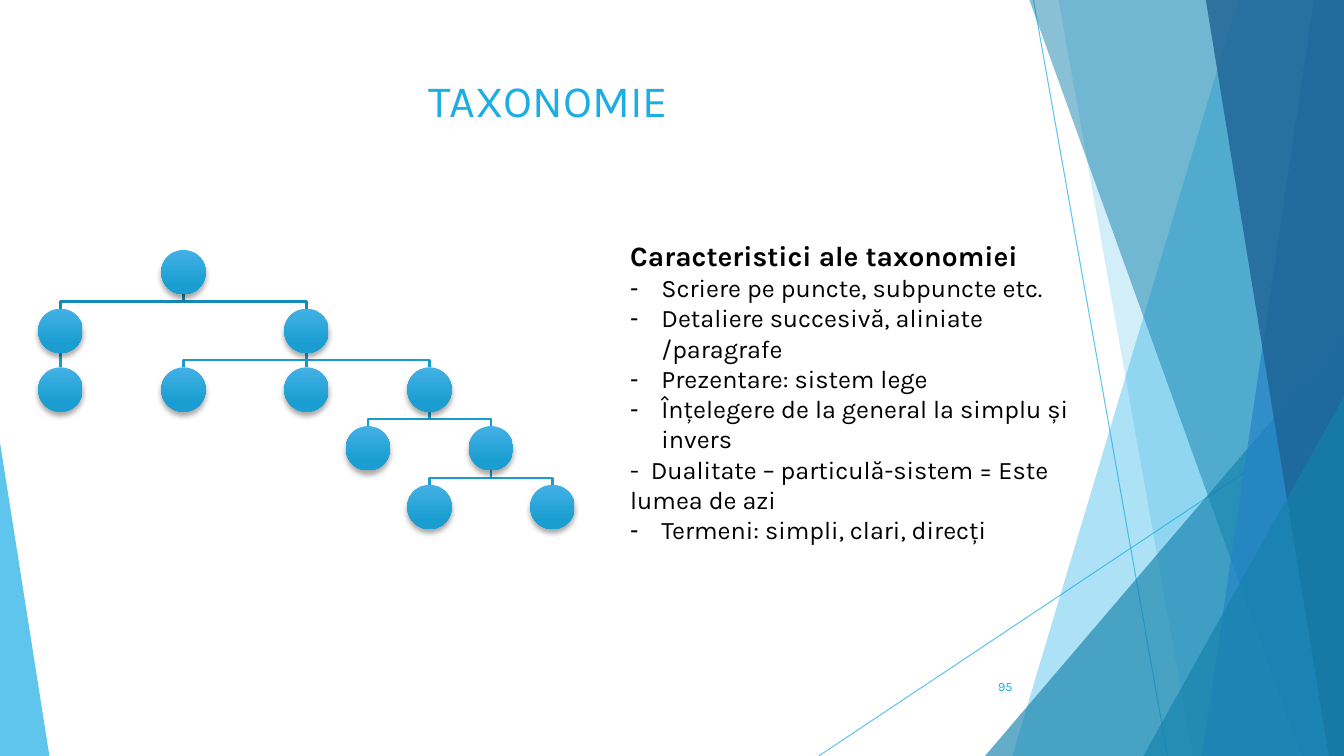
from lxml.etree import SubElement as Sub
from pptx import Presentation
from pptx.dml.color import RGBColor as RGB
from pptx.enum.shapes import MSO_CONNECTOR as LINK, MSO_SHAPE as SHAPE
from pptx.enum.text import MSO_ANCHOR as ANCHOR, MSO_AUTO_SIZE as FIT, PP_ALIGN as ALIGN
from pptx.oxml.ns import qn
from pptx.util import Inches, Pt

WIDE, HIGH = 13.33, 7.5
FONT = "Karla"
SKY, TEAL = RGB(0x1C, 0xAD, 0xE4), RGB(0x14, 0x82, 0xAC)
BLUE, NAVY = RGB(0x26, 0x83, 0xC6), RGB(0x1D, 0x62, 0x94)
BLACK = RGB(0, 0, 0)
GLOW, DEEP = RGB(0x43, 0xB1, 0xE5), RGB(0x1A, 0x9E, 0xD1)
DARK, LIGHT = RGB(0x16, 0x8B, 0xB7), RGB(0x19, 0x9D, 0xCF)

TITLE = "TAXONOMIE"
HEAD = "Caracteristici ale taxonomiei"
ITEMS = [
    ("-", "Scriere pe puncte, subpuncte etc."),
    ("-", "Detaliere succesivă, aliniate /paragrafe"),
    ("-", "Prezentare: sistem lege"),
    ("-", "Înțelegere de la general la simplu și invers"),
    ("", "-  Dualitate – particulă-sistem = Este lumea de azi"),
    ("-", "Termeni: simpli, clari, direcți"),
]
NUMBER = "95"

RAYS = [((10.25, 0), (11.58, HIGH)), ((WIDE, 4.03), (8.12, HIGH))]
FACETS = [
    ("band", 12.28, 10.04, SKY, 36),
    ("band", 10.5, 11.83, SKY, 20),
    ("peak", (9.77, 3.33, 3.56), 1, TEAL, 66),
    ("band", 10.21, 12.91, TEAL, 50),
    ("band", 13.03, 11.92, BLUE, 70),
    ("band", 11.96, 13.18, NAVY, 80),
    ("peak", (11.34, 3.93, 1.99), 1, TEAL, 66),
    ("peak", (0, 4.39, 0.49), 0, SKY, 70),
]

ROOT = (2, 0)
TREE = {
    (2, 0): [0, 4],
    (0, 1): [0],
    (4, 1): [2, 4, 6],
    (6, 2): [5, 7],
    (7, 3): [6, 8],
}
LEFT, TOP, STEP, DROP, SIZE = 0.6, 2.7, 0.61, 2.33 / 4, 0.44

deck = Presentation()
deck.slide_width, deck.slide_height = Inches(WIDE), Inches(HIGH)
slide = deck.slides.add_slide(deck.slide_layouts[1])
shapes = slide.shapes


def fade(fill, share):
    for tint in fill.iter(qn("a:srgbClr")):
        Sub(tint, qn("a:alpha"), val=str(share * 1000))


def path(points, close):
    first, *rest = [(Inches(x), Inches(y)) for x, y in points]
    pen = shapes.build_freeform(*first)
    pen.add_line_segments(rest, close=close)
    shape = pen.convert_to_shape()
    shape.shadow.inherit = False
    return shape


def line(start, end, tint, width):
    link = shapes.add_connector(LINK.STRAIGHT, *map(Inches, start + end))
    link.line.color.rgb, link.line.width = tint, Pt(width)
    Sub(link.element.spPr, qn("a:effectLst"))
    return link


def place(shape, left, top, width, height):
    shape.left, shape.top = Inches(left), Inches(top)
    shape.width, shape.height = Inches(width), Inches(height)


def style(para, size, tint, align, bold=False):
    para.alignment = align
    para.space_before = Pt(0)
    for run in para.runs:
        font = run.font
        font.name, font.size, font.bold = FONT, Pt(size), bold
        font.color.rgb = tint


def mark(para, sign):
    props = para._p.get_or_add_pPr()
    inset = Inches(0.31) if sign else 0
    props.set("marL", str(inset))
    props.set("indent", str(-inset))
    if sign:
        Sub(props, qn("a:buChar"), char=sign)
    else:
        Sub(props, qn("a:buNone"))


def centre(node):
    col, row = node
    return LEFT + col * STEP, TOP + row * DROP


def join(node, kid):
    (x, y), (kid_x, kid_y) = centre(node), centre(kid)
    low, high = y + SIZE / 2, kid_y - SIZE / 2
    tint = DARK if node == ROOT else LIGHT
    if x == kid_x:
        line((x, low), (x, high), tint, 1.5)
        return
    mid = (low + high) / 2
    elbow = path([(x, low), (x, mid), (kid_x, mid), (kid_x, high)], False)
    elbow.fill.background()
    elbow.line.color.rgb, elbow.line.width = tint, Pt(1.5)


def ball(node):
    x, y = centre(node)
    box = (x - SIZE / 2, y - SIZE / 2, SIZE, SIZE)
    disc = shapes.add_shape(SHAPE.OVAL, *map(Inches, box))
    disc.line.fill.background()
    disc.fill.gradient()
    disc.fill.gradient_angle = 270
    for stop, tint, place_at in zip(disc.fill.gradient_stops, (GLOW, DEEP), (0, 0.78)):
        stop.color.rgb, stop.position = tint, place_at
    disc.shadow.inherit = False
    effect = disc.element.spPr.find(qn("a:effectLst"))
    shade = Sub(effect, qn("a:outerShdw"), blurRad=str(Pt(4)), dist=str(Pt(3)),
                dir="5400000", rotWithShape="0")
    Sub(shade, qn("a:srgbClr"), val=str(BLACK))
    fade(shade, 35)


for start, end in RAYS:
    fade(line(start, end, SKY, 0.75).element, 70)

for kind, top, base, tint, share in FACETS:
    if kind == "band":
        facet = path([(top, 0), (WIDE, 0), (WIDE, HIGH), (base, HIGH)], True)
    else:
        x, y, width = top
        facet = shapes.add_shape(SHAPE.ISOSCELES_TRIANGLE,
                                 *map(Inches, (x, y, width, HIGH - y)))
        facet.adjustments[0] = base
        facet.shadow.inherit = False
    facet.fill.solid()
    facet.fill.fore_color.rgb = tint
    facet.line.fill.background()
    fade(facet.element.spPr, share)

title, body = shapes.title, slide.placeholders[1]
for holder in (title, body):
    holder.element.getparent().append(holder.element)
    frame = holder.text_frame
    frame.auto_size, frame.word_wrap = FIT.NONE, True
    frame.vertical_anchor = ANCHOR.TOP

place(title, 0.74, 0.67, 9.4, 0.83)
title.text_frame.text = TITLE
style(title.text_frame.paragraphs[0], 32, SKY, ALIGN.CENTER)

place(body, 6.15, 2.32, 4.96, 3.37)
body.text_frame.text = "\n".join([HEAD] + [text for _, text in ITEMS])
head, *rest = body.text_frame.paragraphs
style(head, 20, BLACK, ALIGN.LEFT, True)
mark(head, "")
for para, (sign, _) in zip(rest, ITEMS):
    style(para, 18, BLACK, ALIGN.LEFT)
    mark(para, sign)

page = shapes.add_textbox(*map(Inches, (9.39, 6.61, 0.75, 0.4)))
page.text_frame.word_wrap = True
page.text_frame.vertical_anchor = ANCHOR.MIDDLE
page.text_frame.text = NUMBER
style(page.text_frame.paragraphs[0], 9, SKY, ALIGN.RIGHT)

links = [(node, (col, node[1] + 1)) for node, cols in TREE.items() for col in cols]
for node, kid in links:
    join(node, kid)
for node in [ROOT] + [kid for _, kid in links]:
    ball(node)

deck.save("out.pptx")
